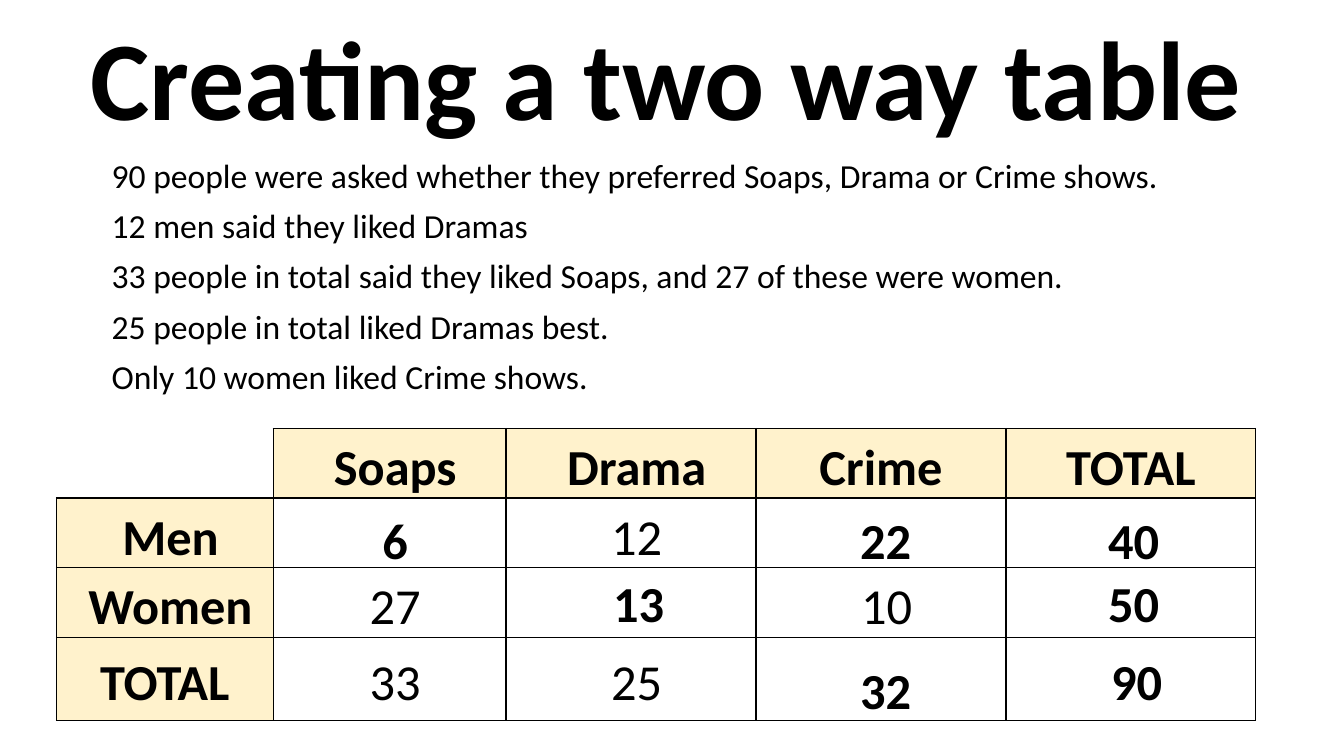
from lxml import etree
from pptx import Presentation
from pptx.dml.color import RGBColor
from pptx.enum.text import MSO_ANCHOR, MSO_AUTO_SIZE, PP_ALIGN
from pptx.oxml.ns import qn
from pptx.util import Pt

LEFT, CENTER = PP_ALIGN.LEFT, PP_ALIGN.CENTER
MIDDLE = MSO_ANCHOR.MIDDLE
FIXED, GROW = MSO_AUTO_SIZE.NONE, MSO_AUTO_SIZE.SHAPE_TO_FIT_TEXT

COLORS = {"text": "000000", "header": "FFF2CC", "border": "000000"}

TITLE = "Creating a two way table"
FACTS = [
    "90 people were asked whether they preferred Soaps, Drama or Crime shows.",
    "12 men said they liked Dramas",
    "33 people in total said they liked Soaps, and 27 of these were women.",
    "25 people in total liked Dramas best.",
    "Only 10 women liked Crime shows.",
]
# Labels and numbers given in the question; the gaps are the answers
ROWS = [
    ["", " Soaps", " Drama", "Crime", "TOTAL"],
    [" Men", "", " 12", "", ""],
    [" Women", " 27", "", " 10", ""],
    ["TOTAL", " 33", " 25", "", " 90"],
]
COL_WIDTHS = [154.8, 166.32, 178.56, 178.56, 178.56]
ROW_HEIGHTS = [41.76, 41.76, 41.76, 59.76]
BOLD_NUMBER = (3, 4)

# Answer centres and tops, relative to the table
ANSWER_CENTERS = {1: 242, 2: 415.9, 3: 592.3, 4: 769.4}
ANSWER_TOPS = {1: 47.5, 2: 92.9, 3: 154.8}
ANSWERS = {(1, 1): "6", (2, 2): "13", (2, 4): "50",
           (1, 4): "40", (1, 3): "22", (3, 3): "32"}

TABLE_PARAGRAPH = {"alignment": CENTER, "line_spacing": 1.15,
                   "space_after": Pt(10)}


def set_all(target, values):
    for name, value in values.items():
        setattr(target, name, value)


def write(p, text, size, bold, paragraph_format):
    set_all(p, paragraph_format)
    r = p.add_run()
    r.text = text
    set_all(r.font, {"name": "Calibri", "size": Pt(size), "bold": bold})
    r.font.color.rgb = RGBColor.from_string(COLORS["text"])


def add_title(s, x, y, w, h):
    sp = s.shapes.title
    set_all(sp, {"left": Pt(x), "top": Pt(y), "width": Pt(w), "height": Pt(h)})
    tf = sp.text_frame
    set_all(tf, {"auto_size": FIXED, "vertical_anchor": MIDDLE,
                 "word_wrap": True})
    write(tf.paragraphs[0], TITLE, 80, True,
          {"alignment": LEFT, "line_spacing": 0.9})


def add_facts(s, x, y, w, h):
    tf = s.shapes.add_textbox(Pt(x), Pt(y), Pt(w), Pt(h)).text_frame
    tf.word_wrap = True
    for i, fact in enumerate(FACTS):
        p = tf.add_paragraph() if i else tf.paragraphs[0]
        write(p, fact, 24, False, {"alignment": LEFT, "line_spacing": 0.9,
                                   "space_before": Pt(10 if i else 0)})


def set_borders(cell, visible):
    tcPr = cell._tc.get_or_add_tcPr()
    for side in "LRTB":
        ln = etree.SubElement(tcPr, qn(f"a:ln{side}"), w=str(Pt(1)))
        if side in visible:
            fill = etree.SubElement(ln, qn("a:solidFill"))
            etree.SubElement(fill, qn("a:srgbClr"), val=COLORS["border"])
        else:
            etree.SubElement(ln, qn("a:noFill"))


def add_two_way_table(s, x, y, w, h):
    table = s.shapes.add_table(len(ROWS), len(COL_WIDTHS),
                               Pt(x), Pt(y), Pt(w), Pt(h)).table
    set_all(table, {"first_row": False, "horz_banding": False})
    for column, width in zip(table.columns, COL_WIDTHS):
        column.width = Pt(width)
    for row, height in zip(table.rows, ROW_HEIGHTS):
        row.height = Pt(height)

    for i, row in enumerate(ROWS):
        for j, text in enumerate(row):
            cell = table.cell(i, j)
            corner = i == j == 0
            header = (i == 0 or j == 0) and not corner
            set_borders(cell, "RB" if corner else "LRTB")
            if header:
                cell.fill.solid()
                cell.fill.fore_color.rgb = RGBColor.from_string(COLORS["header"])
            else:
                cell.fill.background()
            if text:
                set_all(cell, {"vertical_anchor": MIDDLE,
                               "margin_left": Pt(5), "margin_right": Pt(5),
                               "margin_top": 0, "margin_bottom": 0})
                write(cell.text_frame.paragraphs[0], text, 36,
                      header or (i, j) == BOLD_NUMBER, TABLE_PARAGRAPH)


def add_answers(s, x, y):
    for (row, col), answer in ANSWERS.items():
        w = 33 if len(answer) == 1 else 51
        sp = s.shapes.add_textbox(Pt(x + ANSWER_CENTERS[col] - w / 2),
                                  Pt(y + ANSWER_TOPS[row]), Pt(w), Pt(54.7))
        tf = sp.text_frame
        set_all(tf, {"word_wrap": False, "auto_size": GROW})
        write(tf.paragraphs[0], answer, 36, True, TABLE_PARAGRAPH)


def main():
    prs = Presentation()
    set_all(prs, {"slide_width": Pt(960), "slide_height": Pt(540)})
    s = prs.slides.add_slide(prs.slide_layouts[5])
    add_title(s, 57.6, 28.8, 864, 62)
    add_facts(s, 72.7, 110.2, 792, 190.8)
    add_two_way_table(s, 40.3, 306, sum(COL_WIDTHS), sum(ROW_HEIGHTS))
    add_answers(s, 40.3, 306)
    prs.save("out.pptx")


if __name__ == "__main__":
    main()
